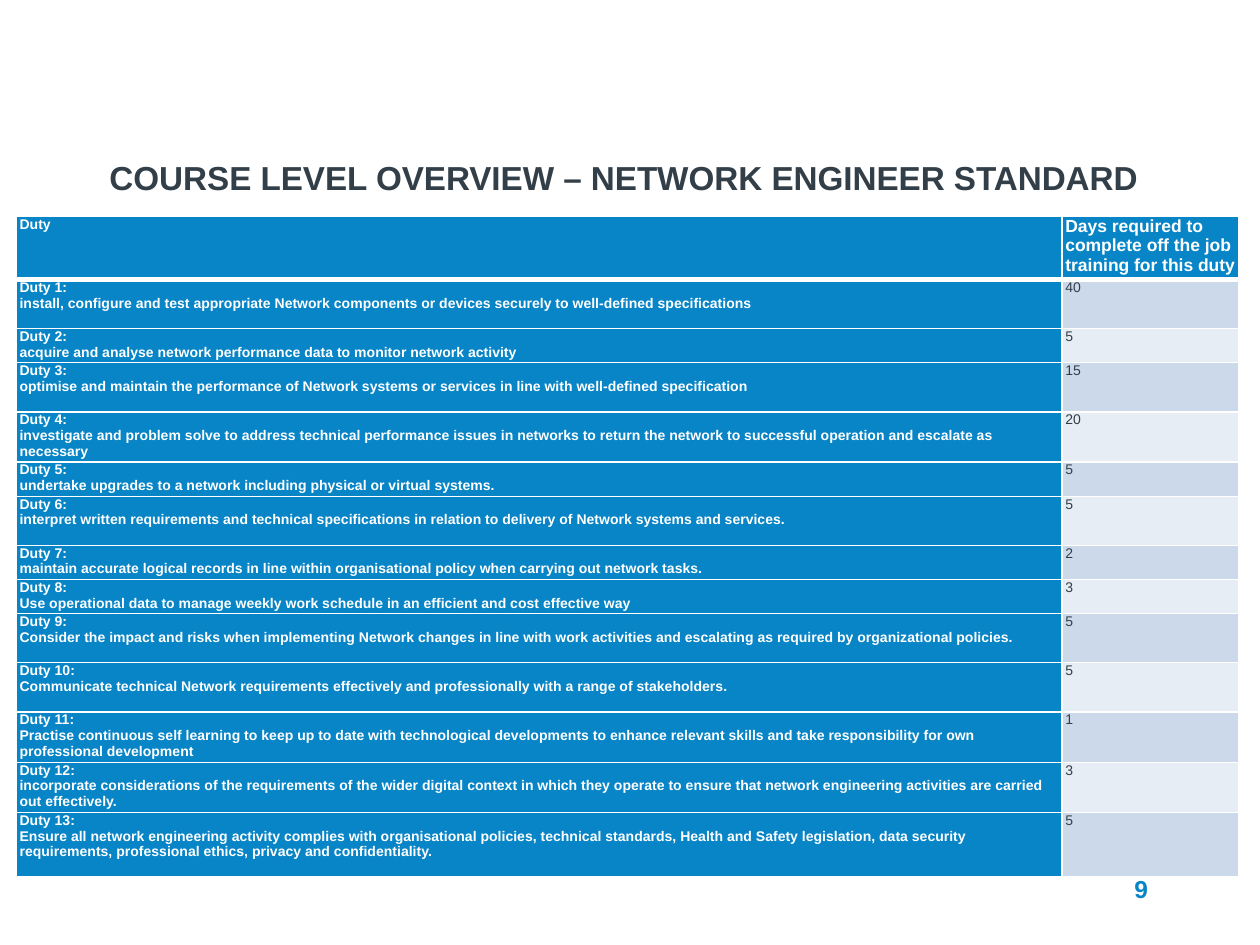
"""Build the course level overview slide with its table of duties."""
import copy

import pptx
import pptx.dml.color
import pptx.enum.text
import pptx.oxml
import pptx.oxml.ns
import pptx.util

Pt = pptx.util.Pt
RGBColor = pptx.dml.color.RGBColor
PP_ALIGN = pptx.enum.text.PP_ALIGN

BLUE = RGBColor(0x08, 0x85, 0xC7)
DARK = RGBColor(0x33, 0x3F, 0x48)
WHITE = RGBColor(0xFF, 0xFF, 0xFF)
BANDS = (RGBColor(0xCC, 0xD9, 0xEB), RGBColor(0xE7, 0xED, 0xF5))

TITLE = "COURSE LEVEL OVERVIEW – NETWORK ENGINEER STANDARD"
PAGE = "9"
HEADER = ("Duty", "Days required to complete off the job training for this duty")
SHORT, TALL, LAST = 19.5, 28.1, 36.6
HEADER_HEIGHT = 21.6
COLUMNS = (597.6, 101)
DUTIES = [
    ("install, configure and test appropriate Network components or devices securely to well-defined specifications", 40, TALL),
    ("acquire and analyse network performance data to monitor network activity", 5, SHORT),
    ("optimise and maintain the performance of Network systems or services in line with well-defined specification", 15, TALL),
    ("investigate and problem solve to address technical performance issues in networks to return the network to "
     "successful operation and escalate as necessary", 20, TALL),
    ("undertake upgrades to a network including physical or virtual systems.", 5, SHORT),
    ("interpret written requirements and technical specifications in relation to delivery of Network systems and services.", 5, TALL),
    ("maintain accurate logical records in line within organisational policy when carrying out network tasks.", 2, SHORT),
    ("Use operational data to manage weekly work schedule in an efficient and cost effective way", 3, SHORT),
    ("Consider the impact and risks when implementing Network changes in line with work activities and escalating "
     "as required by organizational policies.", 5, TALL),
    ("Communicate technical Network requirements effectively and professionally with a range of stakeholders.", 5, TALL),
    ("Practise continuous self learning to keep up to date with technological developments to enhance relevant "
     "skills and take responsibility for own professional development", 1, TALL),
    ("incorporate considerations of the requirements of the wider digital context in which they operate to ensure "
     "that network engineering activities are carried out effectively.", 3, TALL),
    ("Ensure all network engineering activity complies with organisational policies, technical standards, Health and "
     "Safety legislation, data security requirements, professional ethics, privacy and confidentiality.", 5, LAST),
]


def write(p, lines, size, color, bold):
    p.space_after = Pt(6)
    for i, line in enumerate(lines):
        if i:
            p.add_line_break()
        r = p.add_run()
        r.text = line
        r.font.name = "Arial"
        r.font.size = Pt(size)
        r.font.bold = bold
        r.font.color.rgb = color
        if i:
            r._r.getprevious().append(copy.deepcopy(r._r.rPr))


def add_text(s, box, text, size, color):
    tf = s.shapes.add_textbox(*map(Pt, box)).text_frame
    tf.word_wrap = True
    tf.vertical_anchor = pptx.enum.text.MSO_ANCHOR.MIDDLE
    p = tf.paragraphs[0]
    write(p, [text], size, color, True)
    return p


def set_borders(cell, top, bottom):
    tcPr = cell._tc.get_or_add_tcPr()
    for i, (side, width) in enumerate(zip("LRTB", (1, 1, top, bottom))):
        tcPr.insert(i, pptx.oxml.parse_xml(
            f'<a:ln{side} {pptx.oxml.ns.nsdecls("a")} w="{Pt(width)}">'
            f'<a:solidFill><a:srgbClr val="{WHITE}"/></a:solidFill></a:ln{side}>'))


def fill_cell(cell, lines, size, color, bold, fill, top=1, bottom=1):
    cell.margin_left = cell.margin_right = Pt(1.9)
    cell.margin_top = cell.margin_bottom = 0
    cell.fill.solid()
    cell.fill.fore_color.rgb = fill
    set_borders(cell, top, bottom)
    write(cell.text_frame.paragraphs[0], lines, size, color, bold)


def main():
    prs = pptx.Presentation()
    prs.slide_width, prs.slide_height = Pt(720), Pt(540)
    s = prs.slides.add_slide(prs.slide_layouts[6])

    add_text(s, (55.5, 81.8, 607, 41.8), TITLE, 19, DARK).line_spacing = 0.9
    add_text(s, (617, 493.2, 46.1, 28.8), PAGE, 14, BLUE).alignment = PP_ALIGN.RIGHT

    heights = [HEADER_HEIGHT] + [height for _, _, height in DUTIES]
    table = s.shapes.add_table(len(heights), len(COLUMNS), Pt(9.3), Pt(123.6),
                               Pt(sum(COLUMNS)), Pt(sum(heights))).table
    for column, width in zip(table.columns, COLUMNS):
        column.width = Pt(width)
    for row, height in zip(table.rows, heights):
        row.height = Pt(height)

    for col, (text, size) in enumerate(zip(HEADER, (8, 10))):
        fill_cell(table.cell(0, col), [text], size, WHITE, True, BLUE, bottom=3)
    for n, (duty, days, _) in enumerate(DUTIES, 1):
        top = 3 if n == 1 else 1
        fill_cell(table.cell(n, 0), [f"Duty {n}:", duty], 8, WHITE, True, BLUE, top)
        fill_cell(table.cell(n, 1), [str(days)], 8, DARK, False, BANDS[(n - 1) % 2], top)

    prs.save("out.pptx")


if __name__ == "__main__":
    main()
